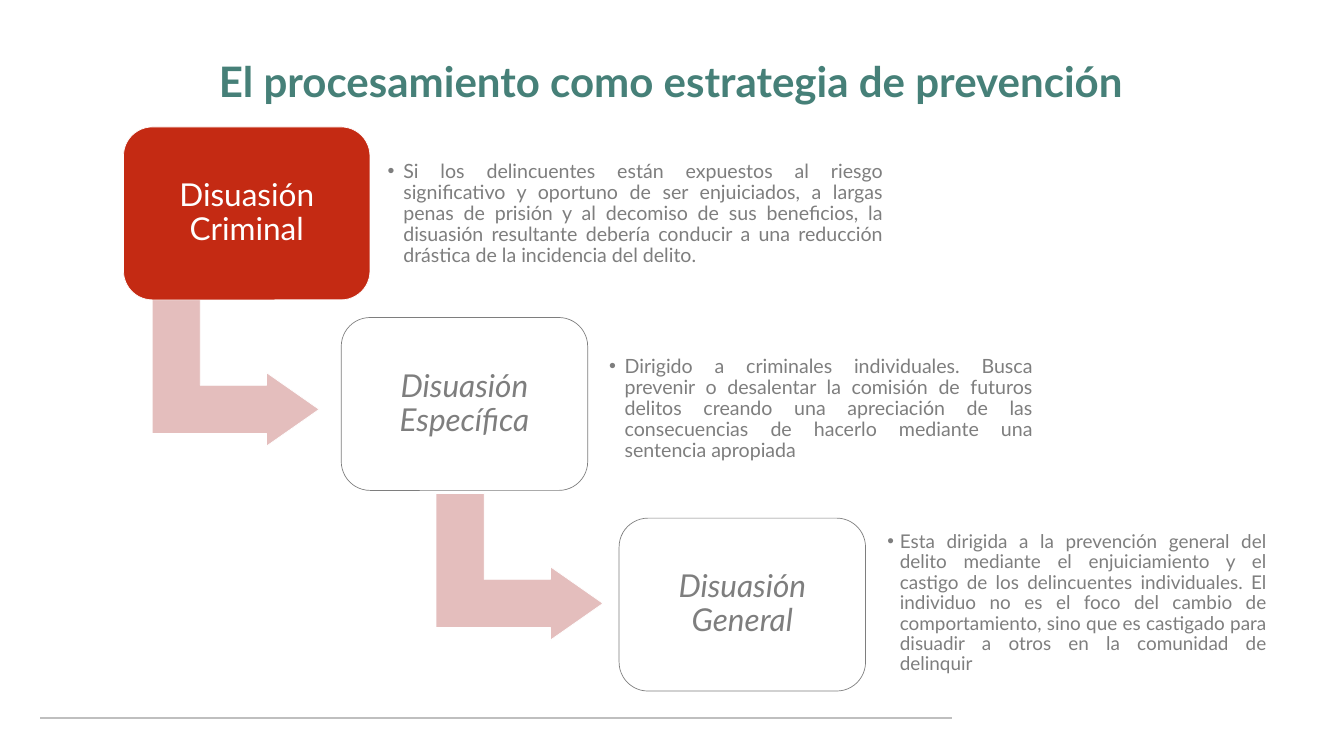
from typing import NamedTuple

from lxml import etree
from pptx import Presentation
from pptx.dml.color import RGBColor
from pptx.enum.shapes import MSO_CONNECTOR, MSO_SHAPE
from pptx.enum.text import MSO_ANCHOR, MSO_AUTO_SIZE, PP_ALIGN
from pptx.oxml.ns import qn
from pptx.util import Pt

ROUND = MSO_SHAPE.ROUNDED_RECTANGLE
BENT = MSO_SHAPE.BENT_UP_ARROW
LINE = MSO_CONNECTOR.STRAIGHT
MIDDLE = MSO_ANCHOR.MIDDLE
FIXED = MSO_AUTO_SIZE.NONE
CENTER, JUSTIFY = PP_ALIGN.CENTER, PP_ALIGN.JUSTIFY

FONT = "Lato"
COLORS = {
    "title": "468078",
    "red": "C42A13",
    "pink": "E4BEBD",
    "gray": "7E7E7E",
    "rule": "BFBFBF",
    "white": "FFFFFF",
}
BOX = (352, 247)
ARROW = (209.5, 238.3)


class Area(NamedTuple):
    left: float
    top: float
    width: float
    height: float


class Step(NamedTuple):
    label: str
    text: str
    left: float
    top: float
    note: Area
    size: float = 28
    indent: float = 22.3
    lead: bool = False


STEPS = [
    Step("Disuasión Criminal",
         "Si los delincuentes están expuestos al riesgo significativo y "
         "oportuno de ser enjuiciados, a largas penas de prisión y al "
         "decomiso de sus beneficios, la disuasión resultante debería "
         "conducir a una reducción drástica de la incidencia del delito.",
         176.4, 181.4, Area(542.9, 212.4, 728.6, 187.2), lead=True),
    Step("Disuasión Específica",
         "Dirigido a criminales individuales. Busca prevenir o desalentar "
         "la comisión de futuros delitos creando una apreciación de las "
         "consecuencias de hacerlo mediante una sentencia apropiada",
         487.4, 453.6, Area(859, 484.6, 626.4, 199.4)),
    Step("Disuasión General",
         "Esta dirigida a la prevención general del delito mediante el "
         "enjuiciamiento y el castigo de los delincuentes individuales. El "
         "individuo no es el foco del cambio de comportamiento, sino que es "
         "castigado para disuadir a otros en la comunidad de delinquir",
         884.2, 740.2, Area(1256.4, 762.5, 563, 199.4), size=27, indent=18),
]
ARROWS = [(231.8, 413.3), (637.2, 690.5)]


def color(name: str) -> RGBColor:
    return RGBColor.from_string(COLORS[name])


def place(shape, area: Area) -> None:
    shape.left, shape.top, shape.width, shape.height = map(Pt, area)


def write(shape, text: str, size: float, tint: str, align, inset: float,
          bold: bool = False, italic: bool = False):
    frame = shape.text_frame
    frame.text = text
    frame.word_wrap = True
    frame.auto_size = FIXED
    frame.vertical_anchor = MIDDLE
    frame.margin_left = frame.margin_right = Pt(inset)
    frame.margin_top = frame.margin_bottom = Pt(inset)
    para = frame.paragraphs[0]
    para.alignment = align
    para.line_spacing = 0.9
    para.space_before = Pt(0)
    font = para.runs[0].font
    font.name, font.size = FONT, Pt(size)
    font.bold, font.italic = bold, italic
    font.color.rgb = color(tint)
    return para


def add_form(shapes, kind, area: Area, fill: str, line: str, *adjust: float):
    form = shapes.add_shape(kind, *map(Pt, area))
    form.shadow.inherit = False
    form.fill.solid()
    form.fill.fore_color.rgb = color(fill)
    form.line.color.rgb = color(line)
    form.line.width = Pt(1)
    for i, value in enumerate(adjust):
        form.adjustments[i] = value
    return form


def add_arrow(shapes, left: float, top: float) -> None:
    arrow = add_form(shapes, BENT, Area(left, top, *ARROW), "pink", "white",
                     0.328, 0.25, 0.358)
    arrow.rotation = 90


def add_box(shapes, step: Step) -> None:
    fill, line, tint = (("red", "white", "white") if step.lead
                        else ("white", "gray", "gray"))
    box = add_form(shapes, ROUND, Area(step.left, step.top, *BOX),
                   fill, line, 0.167)
    write(box, step.label, 45, tint, CENTER, 13.7, italic=not step.lead)


def fill_note(holder, step: Step) -> None:
    place(holder, step.note)
    para = write(holder, step.text, step.size, "gray", JUSTIFY, 10.8)
    props = para._p.get_or_add_pPr()
    props.set("marL", str(Pt(step.indent)))
    props.set("indent", str(-Pt(step.indent)))
    etree.SubElement(props, qn("a:buChar")).set("char", "•")


def add_rule(shapes) -> None:
    rule = shapes.add_connector(LINE, Pt(57.6), Pt(1026), Pt(1359.4), Pt(1026))
    rule.line.color.rgb = color("rule")
    rule.line.width = Pt(2.25)
    etree.SubElement(rule._element.spPr, qn("a:effectLst"))


def main() -> None:
    deck = Presentation()
    deck.slide_width, deck.slide_height = Pt(1919.52), Pt(1080)
    # The comparison layout offers enough body placeholders for the notes
    slide = deck.slides.add_slide(deck.slide_layouts[4])
    shapes = slide.shapes
    title, *holders = slide.placeholders

    # Title and footer rule
    place(title, Area(57.6, 39.6, 1800.7, 159.8))
    write(title, "El procesamiento como estrategia de prevención", 60,
          "title", CENTER, 7.2, bold=True)
    add_rule(shapes)

    # Staircase: arrows lie behind the boxes
    for spot in ARROWS:
        add_arrow(shapes, *spot)
    for step, holder in zip(STEPS, holders):
        add_box(shapes, step)
        fill_note(holder, step)

    # Unused placeholders
    for spare in holders[len(STEPS):]:
        spare._element.getparent().remove(spare._element)

    deck.save("out.pptx")


if __name__ == "__main__":
    main()
